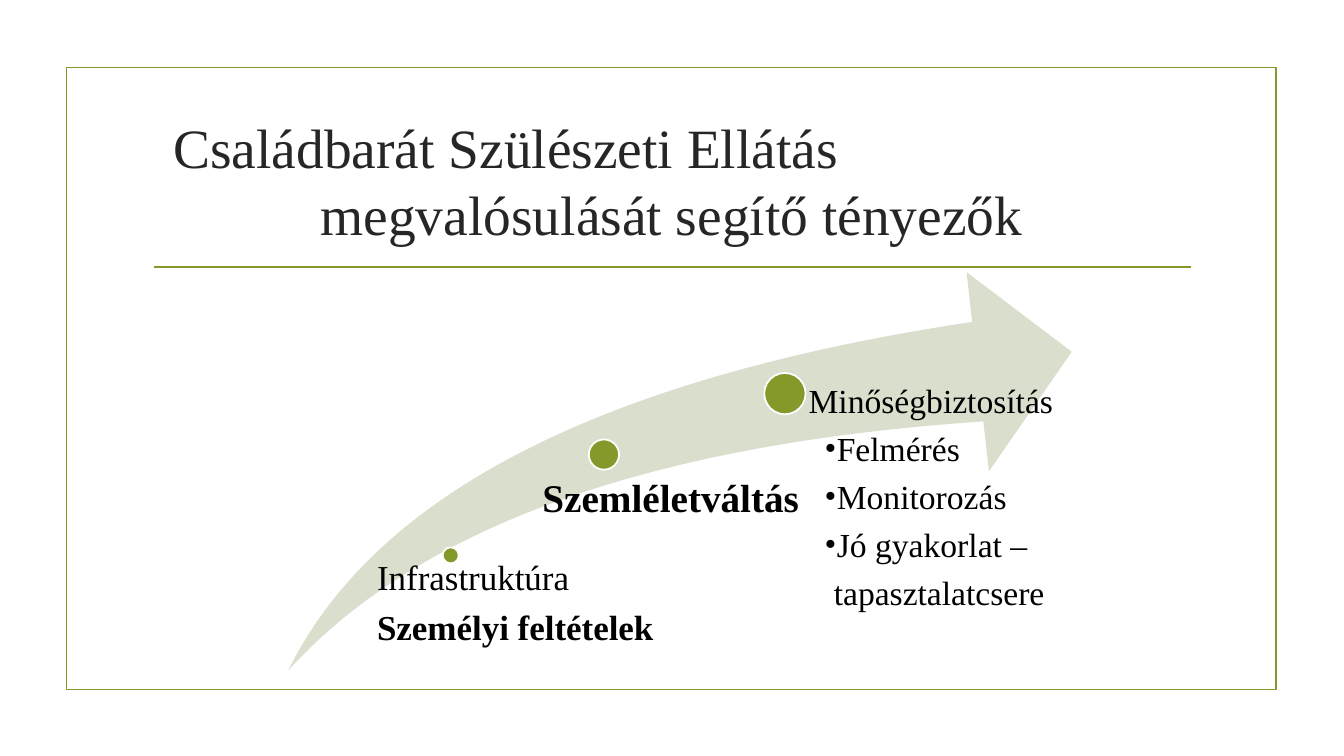
import pptx
import pptx.util
import pptx.dml.color
import pptx.enum.shapes
import pptx.enum.text
import pptx.oxml.ns
from lxml import etree

Inches = pptx.util.Inches
Pt = pptx.util.Pt
SHAPE = pptx.enum.shapes.MSO_SHAPE
FONT = "Times New Roman"
COLOURS = {
    "green": "83992A",
    "swoosh": "D9DECD",
    "title": "262626",
    "label": "000000",
    "white": "FFFFFF",
}


def colour(name):
    return pptx.dml.color.RGBColor.from_string(COLOURS[name])


def add_figure(slide, preset, box, fill=None, line=None):
    figure = slide.shapes.add_shape(preset, *map(Inches, box))
    figure.shadow.inherit = False
    if fill:
        figure.fill.solid()
        figure.fill.fore_color.rgb = colour(fill)
    else:
        figure.fill.background()
    if line:
        figure.line.color.rgb = colour(line)
        figure.line.width = Pt(1.25)
    else:
        figure.line.fill.background()
    return figure


def add_rule(slide, left, right, top):
    rule = slide.shapes.add_connector(
        pptx.enum.shapes.MSO_CONNECTOR.STRAIGHT,
        Inches(left), Inches(top), Inches(right), Inches(top))
    rule.line.color.rgb = colour("green")
    rule.line.width = Pt(1.25)
    etree.SubElement(rule._element.spPr, pptx.oxml.ns.qn("a:effectLst"))


def format_runs(paragraph, size, tint, bold=False):
    for run in paragraph.runs:
        run.font.name = FONT
        run.font.size = Pt(size)
        run.font.bold = bold
        run.font.color.rgb = colour(tint)


def indent(paragraph, margin, bullet=False):
    properties = paragraph._p.get_or_add_pPr()
    properties.set("marL", str(Inches(margin)))
    properties.set("indent", str(Inches(-0.12 if bullet else 0)))
    if bullet:
        for tag, key, value in (("a:buFont", "typeface", FONT), ("a:buChar", "char", "•")):
            etree.SubElement(properties, pptx.oxml.ns.qn(tag)).set(key, value)


def set_title(slide, lines):
    title = slide.shapes.title
    title.left, title.top, title.width, title.height = map(
        Inches, (1.42, 1.07, 10.5, 1.43))
    frame = title.text_frame
    frame.auto_size = pptx.enum.text.MSO_AUTO_SIZE.NONE
    frame.vertical_anchor = pptx.enum.text.MSO_ANCHOR.MIDDLE
    frame.text = "\n".join(text for text, _ in lines)
    for paragraph, (_, margin) in zip(frame.paragraphs, lines):
        paragraph.alignment = pptx.enum.text.PP_ALIGN.LEFT
        indent(paragraph, margin)
        format_runs(paragraph, 39.6, "title")


def add_label(slide, box, inset, size, lines):
    """Each line is (text, bold, left indent, bullet)."""
    frame = slide.shapes.add_textbox(*map(Inches, box)).text_frame
    frame.word_wrap = True
    frame.margin_left = Inches(inset)
    frame.margin_top = frame.margin_right = frame.margin_bottom = 0
    frame.text = "\n".join(line[0] for line in lines)
    for paragraph, (_, bold, margin, bullet) in zip(frame.paragraphs, lines):
        paragraph.line_spacing = 0.9
        paragraph.space_after = Pt(round(size * 0.35, 1))
        indent(paragraph, margin, bullet)
        format_runs(paragraph, size, "label", bold)


def main():
    deck = pptx.Presentation()
    deck.slide_width, deck.slide_height = Inches(13.33), Inches(7.5)
    slide = deck.slides.add_slide(deck.slide_layouts[5])

    # Frame, title and rule
    add_figure(slide, SHAPE.RECTANGLE, (0.66, 0.67, 12, 6.17), line="green")
    add_rule(slide, 1.53, 11.81, 2.65)
    set_title(slide, [("Családbarát Szülészeti Ellátás", 0.2),
                      ("megvalósulását segítő tényezők", 1.66)])

    # Rising arrow
    swoosh = add_figure(slide, SHAPE.SWOOSH_ARROW, (2.86, 2.7, 7.77, 3.95), "swoosh")
    swoosh.adjustments[0] = swoosh.adjustments[1] = 0.25

    # Milestones: dot (left, top, diameter), label box, inset, size, lines
    milestones = [
        ((4.39, 5.43, 0.16), (3.65, 5.56, 2.9, 1.14), 0.09, 25, [
            ("Infrastruktúra", False, 0, False),
            ("Személyi feltételek", True, 0, False)]),
        ((5.84, 4.36, 0.3), (5.22, 4.75, 2.72, 1.95), 0.16, 28, [
            ("Szemléletváltás", True, 0, False)]),
        ((7.58, 3.7, 0.41), (7.8, 3.81, 2.84, 2.92), 0.22, 24, [
            ("Minőségbiztosítás", False, 0, False),
            ("Felmérés", False, 0.28, True),
            ("Monitorozás", False, 0.28, True),
            ("Jó gyakorlat –", False, 0.28, True),
            ("tapasztalatcsere", False, 0.25, False)]),
    ]
    for (left, top, diameter), box, inset, size, lines in milestones:
        add_figure(slide, SHAPE.OVAL, (left, top, diameter, diameter), "green", "white")
        add_label(slide, box, inset, size, lines)

    deck.save("out.pptx")


if __name__ == "__main__":
    main()
